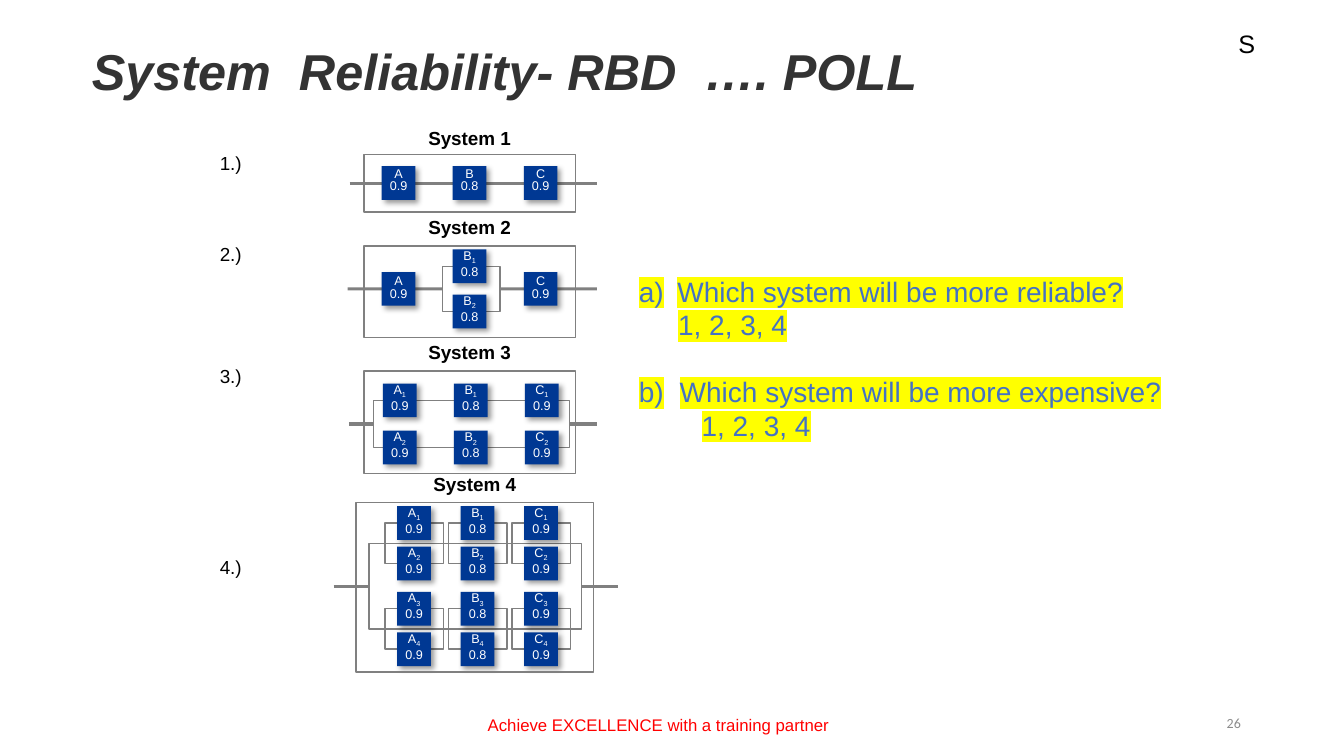
from lxml.etree import SubElement as Sub
from pptx import Presentation
from pptx.dml.color import RGBColor
from pptx.enum.shapes import MSO_CONNECTOR as Link, MSO_SHAPE as Kind
from pptx.enum.text import MSO_ANCHOR as Anchor, PP_ALIGN as Align
from pptx.oxml.ns import qn
from pptx.util import Cm, Pt

BLACK, GREY, NAVY, WHITE = "000000", "808080", "003893", "FFFFFF"
SIDE = 0.85
VALUES = {"A": "0.9", "B": "0.8", "C": "0.9"}


def color(fmt, code):
    fmt.rgb = RGBColor.from_string(code)


def style(run, size, code, name="Arial", bold=False):
    font = run.font
    font.size, font.name, font.bold = Pt(size), name, bold
    color(font.fill.fore_color if font.fill.solid() else font.color, code)


def mark(run, code):
    """Highlight a run whose colour is already set."""
    props = run.font._element
    tint = Sub(props, qn("a:highlight"))
    Sub(tint, qn("a:srgbClr"), val=code)
    props.find(qn("a:solidFill")).addnext(tint)


def note(slide, box, text, size, code=BLACK, name="Arial", bold=False,
         align=Align.LEFT, anchor=Anchor.TOP, lead=None):
    """Add one line of text; a fixed lead also removes the margins."""
    frame = slide.shapes.add_textbox(*map(Cm, box)).text_frame
    frame.word_wrap, frame.vertical_anchor = True, anchor
    frame.text = text
    par = frame.paragraphs[0]
    par.alignment = align
    if lead:
        par.line_spacing = Pt(lead)
        frame.margin_left = frame.margin_right = 0
        frame.margin_top = frame.margin_bottom = 0
    style(par.runs[0], size, code, name, bold)


def frame(slide, box):
    rect = slide.shapes.add_shape(Kind.RECTANGLE, *map(Cm, box))
    rect.shadow.inherit = False
    rect.fill.background()
    color(rect.line.color, GREY)
    rect.line.width = Pt(1)
    return rect


def wire(slide, start, end, y):
    line = slide.shapes.add_connector(
        Link.STRAIGHT, Cm(start), Cm(y), Cm(end), Cm(y))
    color(line.line.color, GREY)
    line.line.width = Pt(2.25)
    Sub(line._element.spPr, qn("a:effectLst"))
    return line


def loop(slide, box, start, end):
    """Draw parallel rails with a lead-in and a lead-out wire."""
    x, y, w, h = box
    rails = frame(slide, box)
    wire(slide, start, x, y + h / 2).end_connect(rails, 1)
    wire(slide, x + w, end, y + h / 2).begin_connect(rails, 3)


def block(slide, x, y, letter, index="", lead=9.8):
    """Draw a component centred on x, y."""
    rect = slide.shapes.add_shape(Kind.RECTANGLE, Cm(x - SIDE / 2),
                                  Cm(y - SIDE / 2), Cm(SIDE), Cm(SIDE))
    rect.shadow.inherit = False
    rect.fill.solid()
    color(rect.fill.fore_color, NAVY)
    rect.line.fill.background()
    glow = Sub(rect._element.spPr.find(qn("a:effectLst")), qn("a:outerShdw"),
               blurRad=str(Pt(4)), dist=str(Pt(3)), dir="2700000",
               algn="ctr", rotWithShape="0")
    Sub(Sub(glow, qn("a:srgbClr"), val=BLACK), qn("a:alpha"), val="40000")
    body = rect.text_frame
    body.margin_left = body.margin_right = body.margin_bottom = 0
    body.margin_top = Cm(0.05)
    body.vertical_anchor = Anchor.TOP
    body.text = letter + "\n" + VALUES[letter]
    if index:
        sub = body.paragraphs[0].add_run()
        sub.text = index
        sub.font._element.set("baseline", "-25000")
    for par in body.paragraphs:
        par.alignment, par.line_spacing = Align.CENTER, Pt(lead)
        for run in par.runs:
            style(run, 9, WHITE)


def pair(slide, x, y, h, letter, first):
    """Put two components on the top and bottom edges of parallel rails."""
    for step in range(2):
        block(slide, x, y + step * h, letter, str(first + step))


def centers(x, w, pitch):
    return [(x + w / 2 + (i - 1) * pitch, key) for i, key in enumerate(VALUES)]


def series(slide, x, y, w, h):
    mid = y + h / 2
    wire(slide, x - 0.36, x + w + 0.54, mid)
    for cx, key in centers(x, w, 1.79):
        block(slide, cx, mid, key, lead=9)


def backup(slide, x, y, w, h):
    rails = (x + 1.98, y + 0.51, 1.45, 1.14)
    loop(slide, rails, x - 0.41, x + w + 0.54)
    for cx, key in centers(x, w, 1.79):
        if key == "B":
            pair(slide, cx, rails[1], rails[3], key, 1)
        else:
            block(slide, cx, rails[1] + rails[3] / 2, key)


def chains(slide, x, y, w, h):
    rails = (x + 0.25, y + 0.74, 4.93, 1.19)
    loop(slide, rails, x - 0.38, x + w + 0.54)
    for cx, key in centers(x + 0.03, w, 1.79):
        pair(slide, cx, rails[1], rails[3], key, 1)


def nested(slide, x, y, w, h):
    rails = (x + 0.33, y + 1.02, 5.36, 2.16)
    loop(slide, rails, x - 0.56, x + w + 0.61)
    for row in range(2):
        top = y + 0.51 + row * rails[3]
        for cx, key in centers(x + 0.07, w, 1.6):
            frame(slide, (cx - 0.73, top, 1.47, 1.02))
            pair(slide, cx, top, 1.02, key, 2 * row + 1)


def system(slide, number, draw, box, rise, drop, lead):
    """Draw a framed system, its name above and its number at the left."""
    x, y, w, h = box
    draw(slide, *box)
    frame(slide, box)
    note(slide, (x, y - rise, w, 0.36), f"System {number}", 13.5, bold=True,
         align=Align.CENTER, lead=lead)
    note(slide, (5.54, y + drop, 1.55, 0.36), f"{number}.)", 13.5, lead=lead)


def poll(slide, box):
    lines = [("Which system will be more reliable?", 0.97, 0),
             ("\t1, 2, 3, 4", 0.99, 0),
             ("b)\tWhich system will be more expensive?", 1.03, 24),
             ("\t1, 2, 3, 4", 1.58, 0)]
    body = slide.shapes.add_textbox(*map(Cm, box)).text_frame
    body.word_wrap = True
    for i, (text, stop, gap) in enumerate(lines):
        par = body.add_paragraph() if i else body.paragraphs[0]
        par.text = text
        props = par._p.get_or_add_pPr()
        if i:
            Sub(Sub(props, qn("a:tabLst")), qn("a:tab"),
                pos=str(Cm(stop)), algn="l")
        else:
            props.set("marL", str(Cm(stop)))
            props.set("indent", str(-Cm(stop)))
            Sub(props, qn("a:buFont"), typeface="Arial")
            Sub(props, qn("a:buAutoNum"), type="alphaLcParenR")
        if gap:
            par.space_before = Pt(gap)
        for run in par.runs:
            style(run, 20, "4472C4")
            mark(run, "FFFF00")


def heading(slide, box):
    title = slide.shapes.title
    title.left, title.top, title.width, title.height = map(Cm, box)
    body = title.text_frame
    body.text = "System  Reliability- RBD  …. POLL"
    body.vertical_anchor = Anchor.MIDDLE
    par = body.paragraphs[0]
    par.alignment, par.line_spacing = Align.LEFT, 0.9
    style(par.runs[0], 36, "333333", bold=True)
    par.runs[0].font.italic = True


def main():
    deck = Presentation()
    deck.slide_width, deck.slide_height = Cm(33.87), Cm(19.05)
    slide = deck.slides.add_slide(deck.slide_layouts[5])
    heading(slide, (2.06, 0.97, 29.21, 1.78))
    systems = [(series, (9.17, 3.89, 5.33, 1.45), 0.61, 0.03, 13.5),
               (backup, (9.17, 6.2, 5.33, 2.31), 0.66, 0, 13.5),
               (chains, (9.17, 9.35, 5.33, 2.59), 0.58, 0.03, 10.9),
               (nested, (8.97, 12.67, 5.99, 4.27), 0.66, 1.42, 13.5)]
    for number, parts in enumerate(systems, 1):
        system(slide, number, *parts)
    poll(slide, (15.85, 6.78, 14.05, 4.52))
    note(slide, (30.96, 0.58, 2.26, 1.07), "S", 18)
    note(slide, (12.04, 17.88, 10.36, 0.76),
         "Achieve EXCELLENCE with a training partner", 12, "FF0000")
    note(slide, (30.38, 17.65, 1.14, 1.14), "26", 10, "8C8C8C", "Calibri",
         align=Align.RIGHT, anchor=Anchor.MIDDLE)
    deck.save("out.pptx")


if __name__ == "__main__":
    main()
